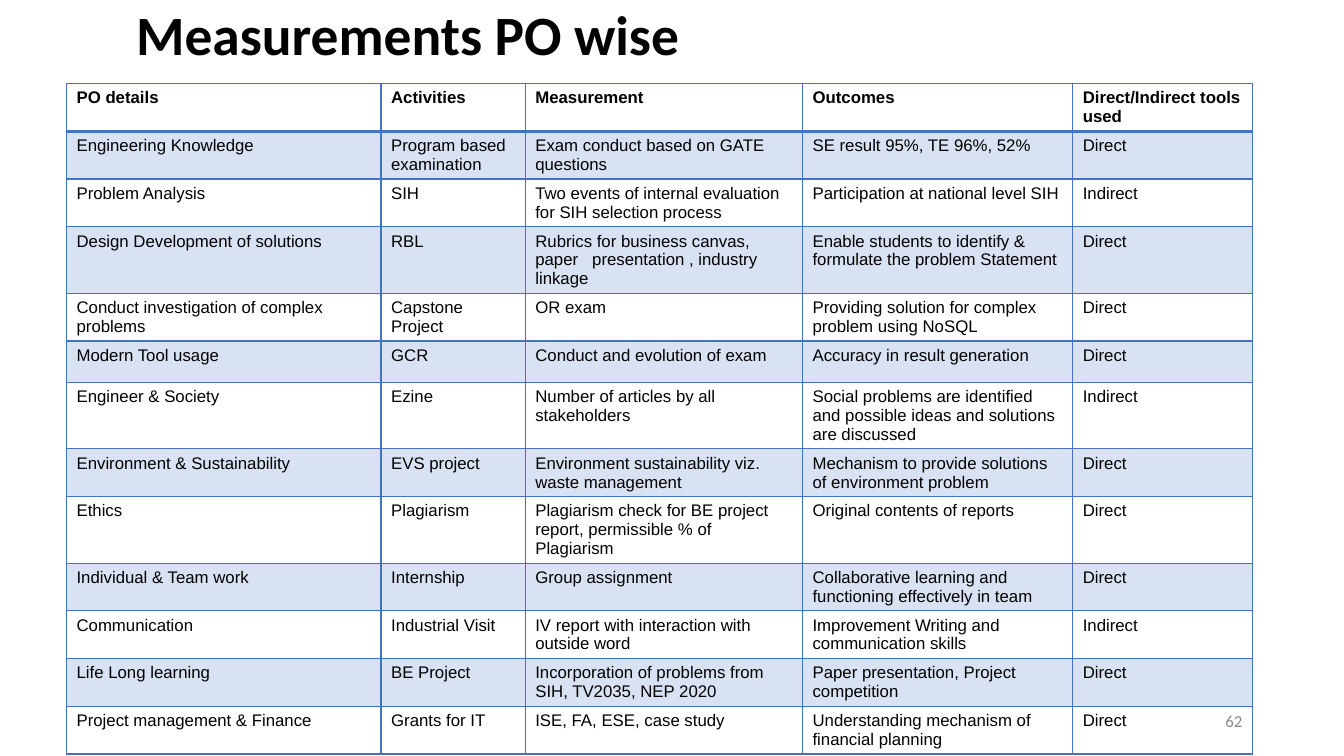
import dataclasses

import lxml.etree
import pptx
import pptx.dml.color
import pptx.enum.text
import pptx.oxml.ns
import pptx.util

Inches = pptx.util.Inches
Pt = pptx.util.Pt
qn = pptx.oxml.ns.qn


@dataclasses.dataclass(frozen=True)
class Theme:
    """Hold the colours, fonts and sizes of the slide."""
    ink: str = "000000"
    muted: str = "888888"
    accent: str = "4472C4"
    band_alpha: int = 20
    heading_font: str = "Calibri"
    table_font: str = "Arial"
    title_size: float = 39.6
    text_size: float = 12
    line_pitch: float = 13.45
    thin_line: float = 1
    thick_line: float = 2


THEME = Theme()
COLUMN_WIDTHS = (3.12, 1.43, 2.75, 2.68, 1.78)
LINES_PER_ROW = (2, 2, 2, 3, 2, 1, 3, 2, 3, 2, 2, 2, 2)
MINIMUM_ROW_HEIGHT = 0.41
ROW_PADDING = 0.1
BOTTOM_MARGIN = 0.01
PO_ROWS = (
    ("PO details", "Activities", "Measurement", "Outcomes", "Direct/Indirect tools used"),
    ("Engineering Knowledge", "Program based examination",
     "Exam conduct based on GATE questions", "SE result 95%, TE 96%, 52%", "Direct"),
    ("Problem Analysis", "SIH",
     "Two events of internal evaluation for SIH selection process",
     "Participation at national level SIH", "Indirect"),
    ("Design Development of solutions", "RBL",
     "Rubrics for business canvas, paper   presentation , industry linkage",
     "Enable students to identify & formulate the problem Statement", "Direct"),
    ("Conduct investigation of complex problems", "Capstone Project", "OR exam",
     "Providing solution for complex problem using NoSQL", "Direct"),
    ("Modern Tool usage", "GCR", "Conduct and evolution of exam",
     "Accuracy in result generation", "Direct"),
    ("Engineer & Society", "Ezine", "Number of articles by all stakeholders",
     "Social problems are identified and possible ideas and solutions are discussed",
     "Indirect"),
    ("Environment & Sustainability", "EVS project",
     "Environment sustainability viz. waste management",
     "Mechanism to provide solutions of environment problem", "Direct"),
    ("Ethics", "Plagiarism",
     "Plagiarism check for BE project report, permissible % of Plagiarism",
     "Original contents of reports", "Direct"),
    ("Individual & Team work", "Internship", "Group assignment",
     "Collaborative learning and functioning effectively in team", "Direct"),
    ("Communication", "Industrial Visit", "IV report with interaction with outside word",
     "Improvement Writing and communication skills", "Indirect"),
    ("Life Long learning", "BE Project",
     "Incorporation of problems from SIH, TV2035, NEP 2020",
     "Paper presentation, Project competition", "Direct"),
    ("Project management & Finance", "Grants for IT", "ISE, FA, ESE, case study",
     "Understanding mechanism of financial planning", "Direct"),
)


def write(frame, text, font_name, size, color, bold=False):
    """Fill a text frame with one formatted paragraph and return the paragraph."""
    frame.text = text
    paragraph = frame.paragraphs[0]
    font = paragraph.runs[0].font
    font.name, font.size, font.bold = font_name, Pt(size), bold
    font.color.rgb = pptx.dml.color.RGBColor.from_string(color)
    return paragraph


def add_title(slide, left, top, width, height):
    """Place the slide heading in the title placeholder."""
    heading = slide.shapes.title
    heading.left, heading.top = Inches(left), Inches(top)
    heading.width, heading.height = Inches(width), Inches(height)
    frame = heading.text_frame
    paragraph = write(frame, "Measurements PO wise", THEME.heading_font,
                      THEME.title_size, THEME.ink, bold=True)
    paragraph.alignment = pptx.enum.text.PP_ALIGN.LEFT
    paragraph.line_spacing = 0.9
    frame.auto_size = pptx.enum.text.MSO_AUTO_SIZE.NONE
    frame.vertical_anchor = pptx.enum.text.MSO_ANCHOR.MIDDLE


def add_page_number(slide, left, top, width, height):
    """Place the right-aligned page number."""
    page_number = slide.shapes.add_textbox(
        Inches(left), Inches(top), Inches(width), Inches(height))
    frame = page_number.text_frame
    frame.word_wrap = True
    frame.vertical_anchor = pptx.enum.text.MSO_ANCHOR.MIDDLE
    paragraph = write(frame, "62", THEME.heading_font, THEME.text_size, THEME.muted)
    paragraph.alignment = pptx.enum.text.PP_ALIGN.RIGHT


def fill_cell(cell, banded):
    """Tint a banded cell and leave any other cell clear."""
    if not banded:
        cell.fill.background()
        return
    cell.fill.solid()
    cell.fill.fore_color.rgb = pptx.dml.color.RGBColor.from_string(THEME.accent)
    tint = next(cell._tc.tcPr.iter(qn("a:srgbClr")))
    lxml.etree.SubElement(tint, qn("a:alpha"), val=str(THEME.band_alpha * 1000))


def border_cell(cell, top_width, bottom_width):
    """Draw the four borders of a cell."""
    sides = {"a:lnL": THEME.thin_line, "a:lnR": THEME.thin_line,
             "a:lnT": top_width, "a:lnB": bottom_width}
    for position, (side, width) in enumerate(sides.items()):
        border = lxml.etree.Element(qn(side), w=str(Pt(width)))
        solid = lxml.etree.SubElement(border, qn("a:solidFill"))
        lxml.etree.SubElement(solid, qn("a:srgbClr"), val=THEME.accent)
        cell._tc.tcPr.insert(position, border)


def add_po_table(slide, left, top):
    """Place the table of programme outcomes with its header and banded rows."""
    row_heights = [
        max(Inches(MINIMUM_ROW_HEIGHT), Inches(ROW_PADDING) + Pt(THEME.line_pitch * lines))
        for lines in LINES_PER_ROW]
    table = slide.shapes.add_table(
        len(PO_ROWS), len(COLUMN_WIDTHS), Inches(left), Inches(top),
        Inches(sum(COLUMN_WIDTHS)), sum(row_heights)).table
    table.horz_banding = False
    for column, width in zip(table.columns, COLUMN_WIDTHS):
        column.width = Inches(width)
    for row_index, po_row in enumerate(PO_ROWS):
        table.rows[row_index].height = row_heights[row_index]
        is_header = row_index == 0
        top_width = THEME.thick_line if row_index == 1 else THEME.thin_line
        bottom_width = THEME.thick_line if is_header else THEME.thin_line
        for column_index, detail in enumerate(po_row):
            cell = table.cell(row_index, column_index)
            cell.margin_bottom = Inches(BOTTOM_MARGIN)
            write(cell.text_frame, detail, THEME.table_font, THEME.text_size,
                  THEME.ink, bold=is_header)
            fill_cell(cell, banded=row_index % 2 == 1)
            border_cell(cell, top_width, bottom_width)


def main():
    """Build the slide and save the presentation."""
    presentation = pptx.Presentation()
    presentation.slide_width = Inches(13.33)
    presentation.slide_height = Inches(7.5)
    slide = presentation.slides.add_slide(presentation.slide_layouts[5])
    add_title(slide, 1.25, 0.15, 11.5, 0.45)
    add_page_number(slide, 9.42, 6.95, 3, 0.4)
    add_po_table(slide, 0.66, 0.83)
    presentation.save("out.pptx")


if __name__ == "__main__":
    main()
